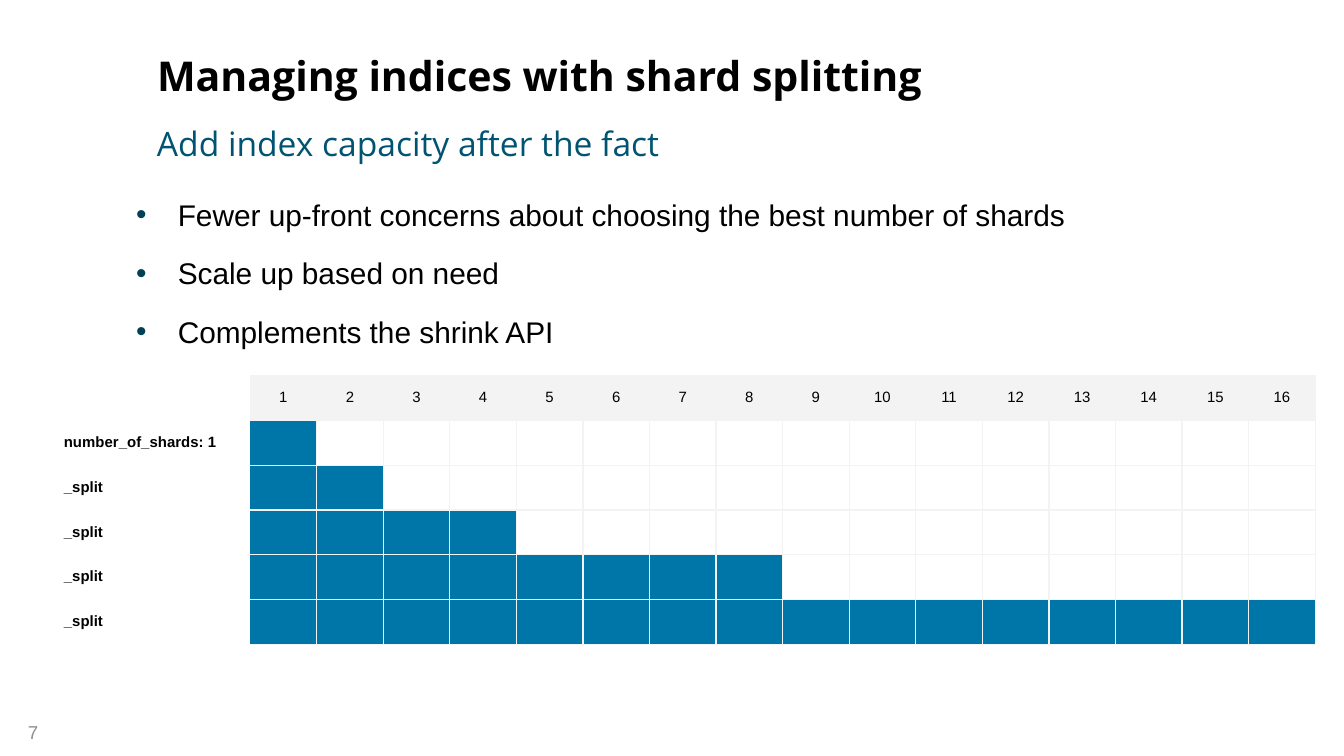
import pptx
import pptx.dml.color
import pptx.enum.text
import pptx.oxml.ns
import pptx.util
from lxml import etree

PX = 4572  # EMU per px, 200 px to the inch
COLORS = {
    "paper": "FFFFFF", "ink": "000000", "subtitle": "005472", "bullet": "014055",
    "number": "909091", "grid": "F3F3F3", "shard": "0076A8",
}
FONTS = {
    "title": {"name": "Open Sans", "size": pptx.util.Pt(22), "bold": True},
    "subtitle": {"name": "Open Sans", "size": pptx.util.Pt(18)},
    "body": {"name": "Arial", "size": pptx.util.Pt(16)},
    "number": {"name": "Arial", "size": pptx.util.Pt(10)},
    "heading": {"name": "Arial", "size": pptx.util.Pt(8)},
    "label": {"name": "Arial", "size": pptx.util.Pt(8), "bold": True},
}
ANCHOR = pptx.enum.text.MSO_ANCHOR
MARGINS = dict.fromkeys(
    ("margin_left", "margin_top", "margin_right", "margin_bottom"), 20 * PX)
STEPS = ["number_of_shards: 1"] + ["_split"] * 4
MAX_SHARDS = 16
LABEL_COLUMNS = 3


def rgb(color):
    return pptx.dml.color.RGBColor.from_string(COLORS[color])


def set_values(target, values):
    for name, value in values.items():
        setattr(target, name, value)


def add_child(parent, tag, **attributes):
    return etree.SubElement(parent, pptx.oxml.ns.qn(tag), attributes)


def write(paragraph, text, font, color):
    run = paragraph.add_run()
    run.text = text
    set_values(run.font, FONTS[font])
    run.font.color.rgb = rgb(color)


def add_frame(slide, box, **values):
    frame = slide.shapes.add_textbox(*(length * PX for length in box)).text_frame
    set_values(frame, {"word_wrap": True, **values})
    return frame


def add_heading(slide, box):
    left, top, width, height = box
    title_height = 114

    # Title
    title = add_frame(slide, (left, top, width, title_height),
                      vertical_anchor=ANCHOR.BOTTOM, **MARGINS)
    title.paragraphs[0].line_spacing = 0.85
    write(title.paragraphs[0], "Managing indices with shard splitting", "title", "ink")

    # Subtitle
    subtitle = add_frame(slide, (left, top + title_height, width - 130, height - title_height),
                         vertical_anchor=ANCHOR.MIDDLE, **MARGINS)
    write(subtitle.paragraphs[0], "Add index capacity after the fact", "subtitle", "subtitle")


def add_benefits(slide, box):
    benefits = [
        "Fewer up-front concerns about choosing the best number of shards",
        "Scale up based on need",
        "Complements the shrink API",
    ]
    frame = add_frame(slide, box)
    indent = 62 * PX
    for index, benefit in enumerate(benefits):
        paragraph = frame.add_paragraph() if index else frame.paragraphs[0]
        if index:
            paragraph.space_before = pptx.util.Pt(12)
        properties = paragraph._p.get_or_add_pPr()
        properties.set("marL", str(indent))
        properties.set("indent", str(-indent))
        bullet_color = add_child(properties, "a:buClr")
        add_child(bullet_color, "a:srgbClr", val=COLORS["bullet"])
        add_child(properties, "a:buFont", typeface="Arial")
        add_child(properties, "a:buChar", char="•")
        write(paragraph, benefit, "body", "ink")


def set_borders(cell, sides):
    """Draw grid lines on the given sides and none on the others."""
    properties = cell._tc.get_or_add_tcPr()
    for position, side in enumerate("LRTB"):
        line = etree.Element(pptx.oxml.ns.qn(f"a:ln{side}"), w=str(pptx.util.Pt(0.75)))
        if side in sides:
            fill = add_child(line, "a:solidFill")
            add_child(fill, "a:srgbClr", val=COLORS["grid"])
        else:
            add_child(line, "a:noFill")
        properties.insert(position, line)


def style_cell(cell, fill, sides):
    set_values(cell, MARGINS)
    cell.fill.solid()
    cell.fill.fore_color.rgb = rgb(fill)
    set_borders(cell, sides)
    # Empty cells need the small size too, or their rows grow
    if not cell.text:
        end = cell.text_frame.paragraphs[0]._p.get_or_add_endParaRPr()
        end.set("sz", "800")


def add_shard_table(slide, box):
    left, top, width, height = (length * PX for length in box)
    row_count = len(STEPS) + 1
    column_count = LABEL_COLUMNS + MAX_SHARDS
    table = slide.shapes.add_table(row_count, column_count, left, top, width, height).table
    set_values(table, {"first_row": False, "horz_banding": False})
    for column in table.columns:
        column.width = width // column_count
    for row in table.rows:
        row.height = height // row_count

    # Shard numbers
    for shard in range(1, MAX_SHARDS + 1):
        paragraph = table.cell(0, LABEL_COLUMNS + shard - 1).text_frame.paragraphs[0]
        paragraph.alignment = pptx.enum.text.PP_ALIGN.CENTER
        write(paragraph, str(shard), "heading", "ink")

    # Step labels
    for row, step in enumerate(STEPS, start=1):
        label = table.cell(row, 0)
        label.merge(table.cell(row, LABEL_COLUMNS - 1))
        write(label.text_frame.paragraphs[0], step, "label", "ink")

    # Fills and grid lines: each split doubles the shards
    for row in range(row_count):
        shard_count = 2 ** (row - 1) if row else 0
        for column in range(column_count):
            shard = column - LABEL_COLUMNS + 1
            if shard < 1:
                fill, sides = "paper", ""
            else:
                sides = "RTB" if shard == 1 else "LRTB"
                fill = "grid" if row == 0 else "shard" if shard <= shard_count else "paper"
            style_cell(table.cell(row, column), fill, sides)


def add_slide_number(slide, box):
    frame = add_frame(slide, box)
    write(frame.paragraphs[0], "7", "number", "number")


def main():
    deck = pptx.Presentation()
    set_values(deck, {"slide_width": 2000 * PX, "slide_height": 1125 * PX})
    slide = deck.slides.add_slide(deck.slide_layouts[6])
    add_slide_number(slide, (22, 1063, 220, 60))
    add_heading(slide, (214, 54, 1722, 204))
    add_benefits(slide, (183, 283, 1436, 336))
    add_shard_table(slide, (75, 559, 1883, 400))
    deck.save("out.pptx")


if __name__ == "__main__":
    main()
